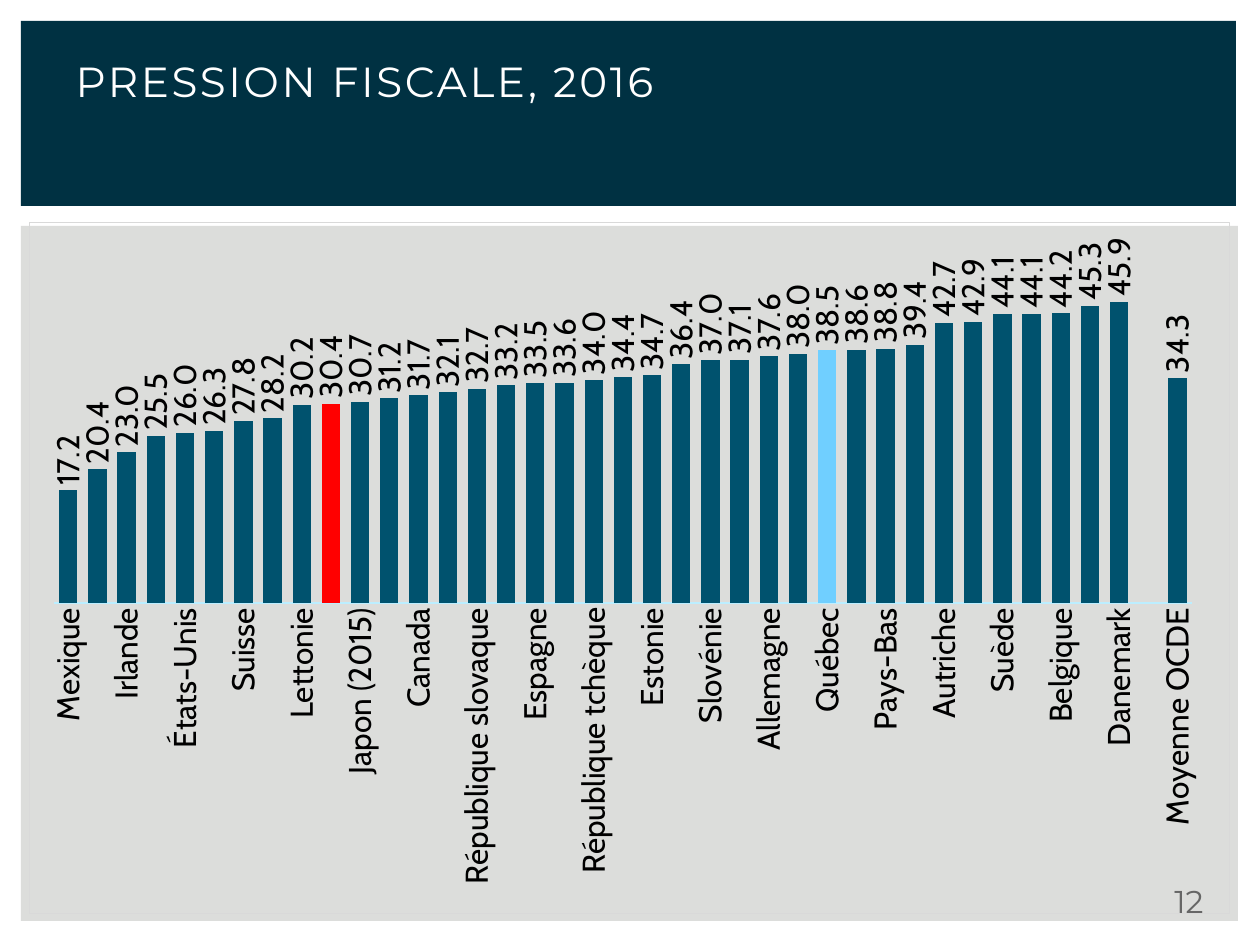
from dataclasses import dataclass
from typing import Optional

from pptx import Presentation
from pptx.chart.data import CategoryChartData
from pptx.dml.color import RGBColor
from pptx.enum.chart import XL_CHART_TYPE, XL_LABEL_POSITION, XL_TICK_MARK
from pptx.enum.shapes import MSO_SHAPE
from pptx.enum.text import MSO_ANCHOR, MSO_AUTO_SIZE, PP_ALIGN
from pptx.oxml import parse_xml
from pptx.oxml.ns import nsdecls
from pptx.util import Pt

COLUMN = XL_CHART_TYPE.COLUMN_CLUSTERED
OUTSIDE_END = XL_LABEL_POSITION.OUTSIDE_END
NO_TICK = XL_TICK_MARK.NONE
RECTANGLE = MSO_SHAPE.RECTANGLE
TOP = MSO_ANCHOR.TOP
NO_AUTOFIT = MSO_AUTO_SIZE.NONE
LEFT, RIGHT = PP_ALIGN.LEFT, PP_ALIGN.RIGHT

NAVY = RGBColor(0x00, 0x31, 0x42)
TEAL = RGBColor(0x00, 0x52, 0x6E)
SKY = RGBColor(0x70, 0xCF, 0xFF)
PALE_BLUE = RGBColor(0xBC, 0xEE, 0xFF)
RED = RGBColor(0xFF, 0x00, 0x00)
PANEL_GREY = RGBColor(0xDC, 0xDD, 0xDB)
BORDER_GREY = RGBColor(0xD9, 0xD9, 0xD9)
TEXT_GREY = RGBColor(0x66, 0x66, 0x66)
WHITE = RGBColor(0xFF, 0xFF, 0xFF)
BLACK = RGBColor(0x00, 0x00, 0x00)

HEADING_FONT, CHART_FONT = "Montserrat", "Cabin"
RATE_FORMAT = "#,##0.0_ ;\\-#,##0.0\\ "
EMU_PER_PX = 914400 / 126


@dataclass(frozen=True)
class Box:
    x: int
    y: int
    w: int
    h: int

    def emu(self) -> tuple:
        return tuple(px(v) for v in (self.x, self.y, self.w, self.h))


@dataclass(frozen=True)
class Panel:
    box: Box
    color: RGBColor


@dataclass(frozen=True)
class Bar:
    rate: Optional[float]
    country: str = ""
    color: Optional[RGBColor] = None


PANELS = [
    Panel(Box(21, 226, 1217, 695), PANEL_GREY),
    Panel(Box(21, 21, 1215, 185), NAVY),
]

BARS = [
    Bar(17.2, "Mexique"), Bar(20.4),
    Bar(23.0, "Irlande"), Bar(25.5),
    Bar(26.0, "États-Unis"), Bar(26.3),
    Bar(27.8, "Suisse"), Bar(28.2),
    Bar(30.2, "Lettonie"), Bar(30.4, color=RED),
    Bar(30.7, "Japon (2015)"), Bar(31.2),
    Bar(31.7, "Canada"), Bar(32.1),
    Bar(32.7, "République slovaque"), Bar(33.2),
    Bar(33.5, "Espagne"), Bar(33.6),
    Bar(34.0, "République tchèque"), Bar(34.4),
    Bar(34.7, "Estonie"), Bar(36.4),
    Bar(37.0, "Slovénie"), Bar(37.1),
    Bar(37.6, "Allemagne"), Bar(38.0),
    Bar(38.5, "Québec", SKY), Bar(38.6),
    Bar(38.8, "Pays-Bas"), Bar(39.4),
    Bar(42.7, "Autriche"), Bar(42.9),
    Bar(44.1, "Suède"), Bar(44.1),
    Bar(44.2, "Belgique"), Bar(45.3),
    Bar(45.9, "Danemark"), Bar(None),
    Bar(34.3, "Moyenne OCDE"),
]


def px(value: int) -> int:
    return round(value * EMU_PER_PX)


def place(sp, box: Box) -> None:
    sp.left, sp.top, sp.width, sp.height = box.emu()


def set_font(font, name: str, size: int, color: RGBColor) -> None:
    font.name = name
    font.size = Pt(size)
    font.color.rgb = color


def write(sp, text: str, *, size: int, color: RGBColor, align,
          font: str = HEADING_FONT, spacing: int = 0) -> None:
    tf = sp.text_frame
    tf.word_wrap = True
    tf.auto_size = NO_AUTOFIT
    tf.vertical_anchor = TOP
    p = tf.paragraphs[0]
    p.alignment = align
    r = p.add_run()
    r.text = text
    set_font(r.font, font, size, color)
    if spacing:
        r.font._element.set("spc", str(spacing))


def draw_panel(s, panel: Panel) -> None:
    sp = s.shapes.add_shape(RECTANGLE, *panel.box.emu())
    sp.shadow.inherit = False
    sp.fill.solid()
    sp.fill.fore_color.rgb = panel.color
    sp.line.fill.background()


def frame_chart(chart) -> None:
    values = {"x": 0.02, "y": 0.076, "w": 0.949, "h": 0.475}
    offsets = "".join(f'<c:{k} val="{v}"/>' for k, v in values.items())
    plot_area = chart.element.xpath(".//c:plotArea")[0]
    for old in plot_area.xpath("./c:layout"):
        plot_area.remove(old)
    plot_area.insert(0, parse_xml(
        f'<c:layout {nsdecls("c")}><c:manualLayout><c:layoutTarget val="inner"/>'
        f'<c:xMode val="edge"/><c:yMode val="edge"/>{offsets}'
        '</c:manualLayout></c:layout>'))
    chart.element.xpath("./c:txPr")[0].addprevious(parse_xml(
        f'<c:spPr {nsdecls("c", "a")}><a:noFill/><a:ln w="{Pt(0.75)}">'
        f'<a:solidFill><a:srgbClr val="{BORDER_GREY}"/></a:solidFill>'
        '</a:ln></c:spPr>'))
    for body in chart.element.xpath(".//c:dLbls//a:bodyPr | .//c:catAx//a:bodyPr"):
        body.set("rot", "-5400000")
        body.set("vert", "horz")


def draw_chart(s, box: Box, bars: list[Bar]) -> None:
    data = CategoryChartData(number_format=RATE_FORMAT)
    data.categories = [bar.country for bar in bars]
    data.add_series("", [bar.rate for bar in bars])
    chart = s.shapes.add_chart(COLUMN, *box.emu(), data).chart
    chart.has_title = False
    chart.has_legend = False
    set_font(chart.font, CHART_FONT, 18, BLACK)

    axis = chart.category_axis
    axis.major_tick_mark = axis.minor_tick_mark = NO_TICK
    axis.has_major_gridlines = False
    axis.format.line.color.rgb = PALE_BLUE
    axis.format.line.width = Pt(0.75)
    set_font(axis.tick_labels.font, CHART_FONT, 18, BLACK)

    rates = chart.value_axis
    rates.minimum_scale, rates.maximum_scale = 0, 50
    rates.has_major_gridlines = False
    rates.visible = False

    plot = chart.plots[0]
    plot.vary_by_categories = False
    plot.gap_width, plot.overlap = 59, -27
    series = plot.series[0]
    series.invert_if_negative = False
    series.format.fill.solid()
    series.format.fill.fore_color.rgb = TEAL
    for i, bar in enumerate(bars):
        if bar.color is not None:
            fill = series.points[i].format.fill
            fill.solid()
            fill.fore_color.rgb = bar.color

    labels = series.data_labels
    labels.show_value = True
    labels.position = OUTSIDE_END
    labels.number_format = RATE_FORMAT
    labels.number_format_is_linked = False
    set_font(labels.font, CHART_FONT, 18, BLACK)
    frame_chart(chart)


def main() -> None:
    prs = Presentation()
    prs.slide_width, prs.slide_height = px(1260), px(945)
    s = prs.slides.add_slide(prs.slide_layouts[5])
    for panel in PANELS:
        draw_panel(s, panel)

    number = s.shapes.add_textbox(*Box(1135, 876, 81, 38).emu())
    write(number, "12", size=18, color=TEXT_GREY, align=RIGHT)

    title = s.shapes.title
    place(title, Box(63, 49, 872, 134))
    write(title, "PRESSION FISCALE, 2016", size=24, color=WHITE,
          align=LEFT, spacing=150)
    title.element.getparent().append(title.element)

    draw_chart(s, Box(29, 222, 1201, 692), BARS)
    prs.save("out.pptx")


if __name__ == "__main__":
    main()
